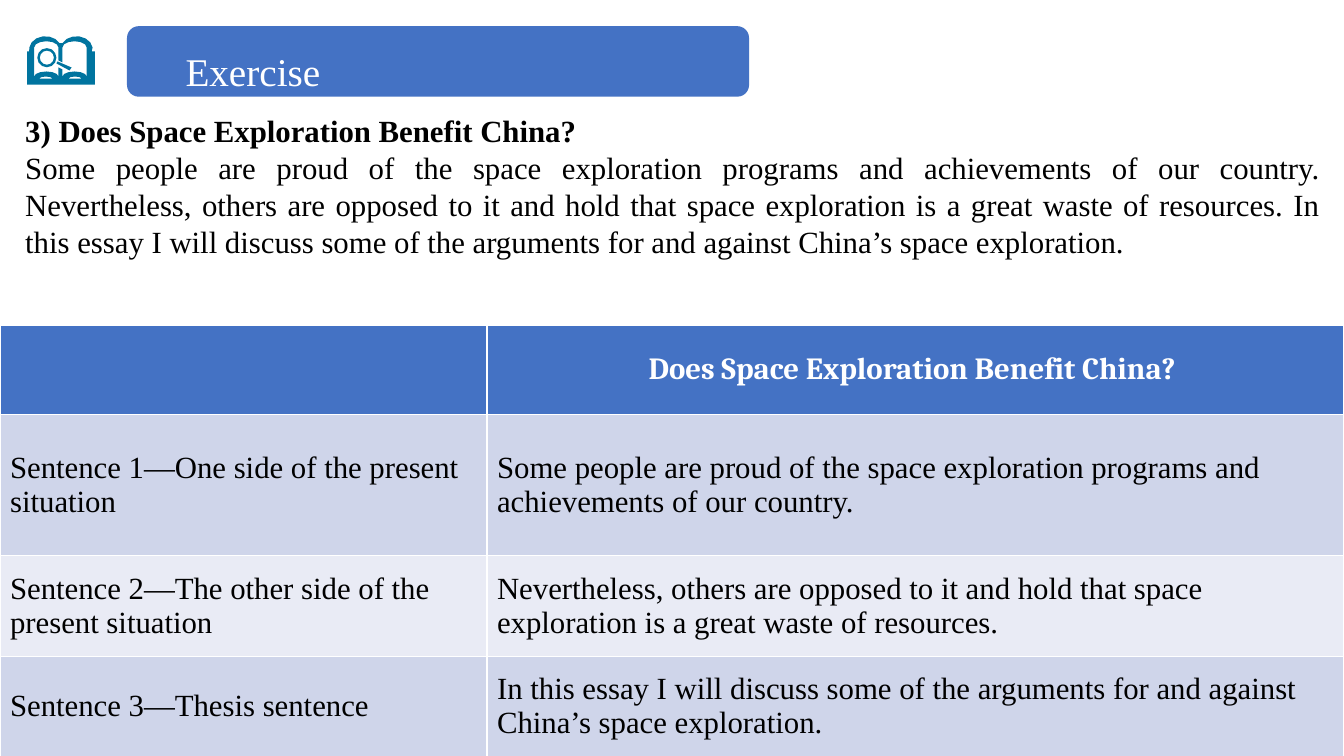
"""Build the space exploration exercise slide."""
from dataclasses import dataclass
from math import cos, radians, sin

from lxml.etree import SubElement
from pptx import Presentation
from pptx.dml.color import RGBColor
from pptx.enum.shapes import MSO_SHAPE
from pptx.enum.text import MSO_ANCHOR, PP_ALIGN
from pptx.oxml.ns import qn
from pptx.util import Inches, Pt


@dataclass(frozen=True)
class Theme:
    """Hold the colours, fonts and type sizes."""
    accent: RGBColor = RGBColor.from_string("4472C4")
    icon: RGBColor = RGBColor.from_string("00749F")
    band_dark: RGBColor = RGBColor.from_string("CFD5EA")
    band_light: RGBColor = RGBColor.from_string("E9EBF5")
    white: RGBColor = RGBColor.from_string("FFFFFF")
    black: RGBColor = RGBColor.from_string("000000")
    serif: str = "Times New Roman"
    heading: str = "Cambria"
    title_size: Pt = Pt(28)
    text_size: Pt = Pt(22)


THEME = Theme()
TOPIC = "Does Space Exploration Benefit China?"
SENTENCES = [
    ("Sentence 1—One side of the present situation",
     "Some people are proud of the space exploration programs and achievements of our country."),
    ("Sentence 2—The other side of the present situation",
     "Nevertheless, others are opposed to it and hold that space exploration is a great waste of resources."),
    ("Sentence 3—Thesis sentence",
     "In this essay I will discuss some of the arguments for and against China’s space exploration."),
]
COLUMN_WIDTHS = (4.83, 8.5)
ROW_HEIGHTS = (0.88, 1.4, 1, 1)


def set_attrs(obj, values):
    """Set each named attribute of an object."""
    for name, value in values.items():
        setattr(obj, name, value)


def place(sp, left, top, width, height):
    """Position a shape by lengths in inches."""
    set_attrs(sp, {"left": Inches(left), "top": Inches(top),
                   "width": Inches(width), "height": Inches(height)})


def write(p, text, color, size=THEME.text_size, font=THEME.serif, bold=False, **layout):
    """Write one formatted run into a paragraph."""
    set_attrs(p, layout)
    r = p.add_run()
    r.text = text
    set_attrs(r.font, {"size": size, "name": font, "bold": bold})
    r.font.color.rgb = color


def paint(sp, color):
    """Give a shape a flat fill without line or shadow."""
    sp.shadow.inherit = False
    sp.fill.solid()
    sp.fill.fore_color.rgb = color
    sp.line.fill.background()


def arc(cx, cy, rx, ry, start, end, steps=6):
    """Return points along an ellipse between two angles."""
    angles = [radians(start + (end - start) * i / steps) for i in range(steps + 1)]
    return [(cx + rx * cos(a), cy - ry * sin(a)) for a in angles]


def book_contours():
    """Return the outlines of the open book and its lens."""
    cover = [(0.27, 0.84), (0.27, 0.51), (0.29, 0.51),
             *arc(0.45, 0.49, 0.16, 0.13, 172, 28),
             *arc(0.76, 0.49, 0.16, 0.13, 152, 8),
             (0.91, 0.51), (0.94, 0.51), (0.94, 0.84)]
    pages = [*arc(0.46, 0.47, 0.12, 0.06, 180, 0), (0.58, 0.6), (0.62, 0.62),
             *arc(0.74, 0.47, 0.12, 0.06, 180, 0),
             *arc(0.74, 0.76, 0.12, 0.05, 0, 180), (0.62, 0.69), (0.58, 0.67),
             *arc(0.46, 0.76, 0.12, 0.05, 0, 180)]
    handle = [(0.57, 0.61), (0.71, 0.67), (0.69, 0.7), (0.56, 0.63)]
    lens = [arc(0.465, 0.573, r, r, 0, 360, 12) for r in (0.095, 0.07)]
    folds = [arc(cx, 0.78, 0.065, 0.02, 0, 180, 4) for cx in (0.455, 0.745)]
    return [cover, pages, handle, *lens, *folds]


def add_icon(slide):
    """Draw the book icon as one freeform."""
    contours = [[(Inches(x), Inches(y)) for x, y in c] for c in book_contours()]
    builder = slide.shapes.build_freeform(*contours[0][0])
    for i, points in enumerate(contours):
        if i:
            builder.move_to(*points[0])
        builder.add_line_segments(points[1:], close=True)
    paint(builder.convert_to_shape(), THEME.icon)


def add_title(slide, text):
    """Set the title on a rounded banner."""
    title = slide.shapes.title
    banner = slide.shapes.add_shape(MSO_SHAPE.ROUNDED_RECTANGLE, Inches(1.26), Inches(0.26),
                                    Inches(6.17), Inches(0.7))
    paint(banner, THEME.accent)
    title._element.addprevious(banner._element)
    place(title, 1.74, 0.28, 5.94, 0.65)
    tf = title.text_frame
    set_attrs(tf, {"vertical_anchor": MSO_ANCHOR.TOP, "word_wrap": True})
    write(tf.paragraphs[0], text, THEME.white, THEME.title_size,
          alignment=PP_ALIGN.LEFT, line_spacing=1.3, space_before=Pt(6))


def add_passage(slide, heading, text):
    """Fill the body placeholder with a heading and a justified passage."""
    body = slide.placeholders[1]
    place(body, 0.15, 1.06, 13.04, 1.58)
    tf = body.text_frame
    tf.word_wrap = True
    for p, line, bold in ((tf.paragraphs[0], heading, True), (tf.add_paragraph(), text, False)):
        write(p, line, THEME.black, bold=bold, alignment=PP_ALIGN.JUSTIFY,
              space_before=Pt(0), line_spacing=1.0)
        pPr = p._p.get_or_add_pPr()
        pPr.set("marL", "0")
        pPr.set("indent", "0")
        SubElement(pPr, qn("a:buNone"))


def format_cell(cell, fill):
    """Fill a cell and centre its text vertically."""
    cell.vertical_anchor = MSO_ANCHOR.MIDDLE
    cell.fill.solid()
    cell.fill.fore_color.rgb = fill


def add_sentence_table(slide):
    """Add the table that sorts the sentences by function."""
    table = slide.shapes.add_table(len(ROW_HEIGHTS), len(COLUMN_WIDTHS), Inches(0), Inches(3.23),
                                   Inches(sum(COLUMN_WIDTHS)), Inches(sum(ROW_HEIGHTS))).table
    for column, width in zip(table.columns, COLUMN_WIDTHS):
        column.width = Inches(width)
    for row, height in zip(table.rows, ROW_HEIGHTS):
        row.height = Inches(height)
    for cell in table.rows[0].cells:
        format_cell(cell, THEME.accent)
    write(table.cell(0, 1).text_frame.paragraphs[0], f"{TOPIC} ", THEME.white,
          font=THEME.heading, bold=True, alignment=PP_ALIGN.CENTER)
    for i, texts in enumerate(SENTENCES, 1):
        for j, text in enumerate(texts):
            cell = table.cell(i, j)
            format_cell(cell, THEME.band_dark if i % 2 else THEME.band_light)
            write(cell.text_frame.paragraphs[0], text, THEME.black)


def main():
    """Build and save the slide."""
    prs = Presentation()
    set_attrs(prs, {"slide_width": Inches(13.33), "slide_height": Inches(7.5)})
    slide = prs.slides.add_slide(prs.slide_layouts[1])
    add_icon(slide)
    add_title(slide, "Exercise")
    add_passage(slide, f"3) {TOPIC}", " ".join(text for _, text in SENTENCES))
    add_sentence_table(slide)
    prs.save("out.pptx")


if __name__ == "__main__":
    main()
